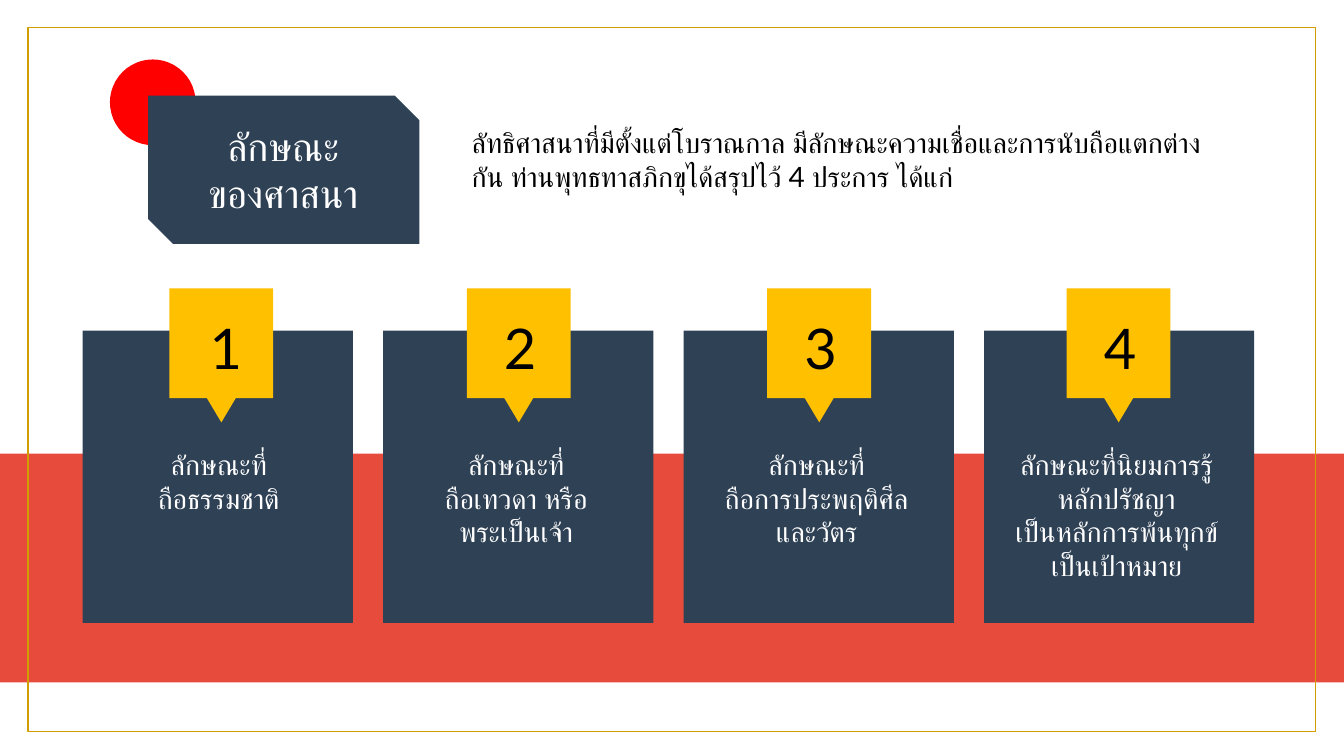
from lxml import etree
from pptx import Presentation
from pptx.dml.color import RGBColor
from pptx.enum import shapes, text
from pptx.oxml import ns
from pptx.util import Inches, Pt

NAVY = RGBColor(0x2F, 0x41, 0x55)
CORAL = RGBColor(0xE7, 0x4B, 0x3C)
AMBER = RGBColor(0xFF, 0xC0, 0x00)
GOLD = RGBColor(0xD0, 0x9E, 0x00)
RED = RGBColor(0xFF, 0x00, 0x00)
WHITE = RGBColor(0xFF, 0xFF, 0xFF)
BLACK = RGBColor(0x00, 0x00, 0x00)
FONT = "Lato"
SHAPE = shapes.MSO_SHAPE
LEFT, CENTER = text.PP_ALIGN.LEFT, text.PP_ALIGN.CENTER

TITLE = ["ลักษณะ", "ของศาสนา"]
INTRO = ["ลัทธิศาสนาที่มีตั้งแต่โบราณกาล มีลักษณะความเชื่อและการนับถือแตกต่างกัน "
         "ท่านพุทธทาสภิกขุได้สรุปไว้ 4 ประการ ได้แก่"]
CARDS = [
    {"lines": ["ลักษณะที่\nถือธรรมชาติ"],
     "label": (1.32, 1.7, 0.77), "tab": 1.68, "number": (1.98, 0.39)},
    {"lines": ["ลักษณะที่\nถือเทวดา หรือ", "พระเป็นเจ้า"],
     "label": (4.22, 1.8, 1.11), "tab": 4.63, "number": (4.9, 0.49)},
    {"lines": ["ลักษณะที่\nถือการประพฤติศีล", "และวัตร"],
     "label": (6.97, 2.26, 1.11), "tab": 7.61, "number": (7.88, 0.5)},
    {"lines": ["ลักษณะที่นิยมการรู้", "หลักปรัชญา", "เป็นหลักการพ้นทุกข์", "เป็นเป้าหมาย"],
     "label": (9.86, 2.43, 1.45), "tab": 10.58, "number": (10.85, 0.51)},
]
CARD_LEFT, CARD_STEP, CARD_TOP = 0.82, 2.98, 3.28
TAB_TOP, POINTER_INSET, POINTER_TOP = 2.86, 0.36, 3.93
LABEL_TOP, NUMBER_TOP = 4.39, 3.06


def add_block(parent, kind, area, fill=None, line=None):
    block = parent.add_shape(kind, *map(Inches, area))
    block.shadow.inherit = False
    if fill is None:
        block.fill.background()
    else:
        block.fill.solid()
        block.fill.fore_color.rgb = fill
    if line is None:
        block.line.fill.background()
    else:
        block.line.color.rgb = line
        block.line.width = Pt(1)
    return block


def add_text(parent, lines, area, size, color, align, wrap=False):
    box = parent.add_textbox(*map(Inches, area))
    frame = box.text_frame
    frame.word_wrap = wrap
    frame.auto_size = text.MSO_AUTO_SIZE.SHAPE_TO_FIT_TEXT
    for index, line in enumerate(lines):
        para = frame.paragraphs[0] if index == 0 else frame.add_paragraph()
        para.text = line
        para.alignment = align
        for span in para.runs:
            for name, value in {"name": FONT, "size": Pt(size)}.items():
                setattr(span.font, name, value)
            span.font.color.rgb = color
            properties = span.font._element
            etree.SubElement(properties, ns.qn("a:cs"), typeface=FONT)


def add_card(page, index, card):
    group = page.shapes.add_group_shape().shapes
    label_left, label_width, label_height = card["label"]
    number_left, number_width = card["number"]
    tab = card["tab"]
    add_block(group, SHAPE.RECTANGLE,
              (CARD_LEFT + index * CARD_STEP, CARD_TOP, 2.68, 2.9), NAVY)
    add_text(group, card["lines"],
             (label_left, LABEL_TOP, label_width, label_height), 20, WHITE, CENTER)
    add_block(group, SHAPE.RECTANGLE, (tab, TAB_TOP, 1.03, 1.09), AMBER)
    pointer = add_block(group, SHAPE.ISOSCELES_TRIANGLE,
                        (tab + POINTER_INSET, POINTER_TOP, 0.31, 0.26), AMBER)
    pointer.rotation = 180
    add_text(group, [str(index + 1)],
             (number_left, NUMBER_TOP, number_width, 0.77), 40, BLACK, LEFT)


def add_header(page):
    group = page.shapes.add_group_shape().shapes
    add_block(group, SHAPE.OVAL, (1.09, 0.59, 0.85, 0.85), RED)
    add_block(group, SHAPE.SNIP_2_DIAG_RECTANGLE, (1.47, 0.95, 2.69, 1.47), NAVY)
    add_text(group, TITLE, (1.83, 1.16, 1.96, 1.04), 28, WHITE, CENTER)
    add_text(group, INTRO, (4.58, 1.2, 7.46, 0.77), 20, BLACK, LEFT, wrap=True)


def main():
    deck = Presentation()
    deck.slide_width, deck.slide_height = Inches(13.33), Inches(7.5)
    page = deck.slides.add_slide(deck.slide_layouts[6])
    add_block(page.shapes, SHAPE.RECTANGLE, (0, 4.5, 13.33, 2.27), CORAL)
    for index, card in enumerate(CARDS):
        add_card(page, index, card)
    add_header(page)
    add_block(page.shapes, SHAPE.RECTANGLE, (0.28, 0.27, 12.77, 6.99), line=GOLD)
    deck.save("out.pptx")


if __name__ == "__main__":
    main()
